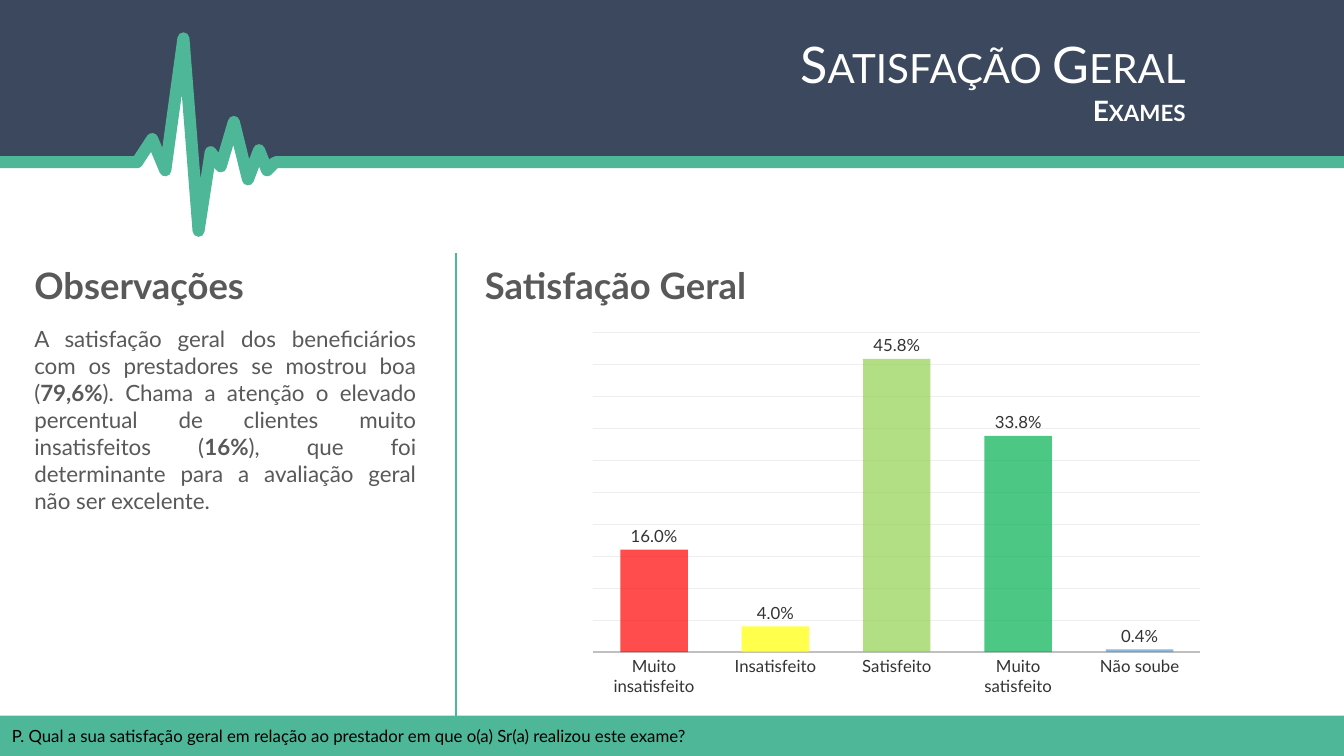
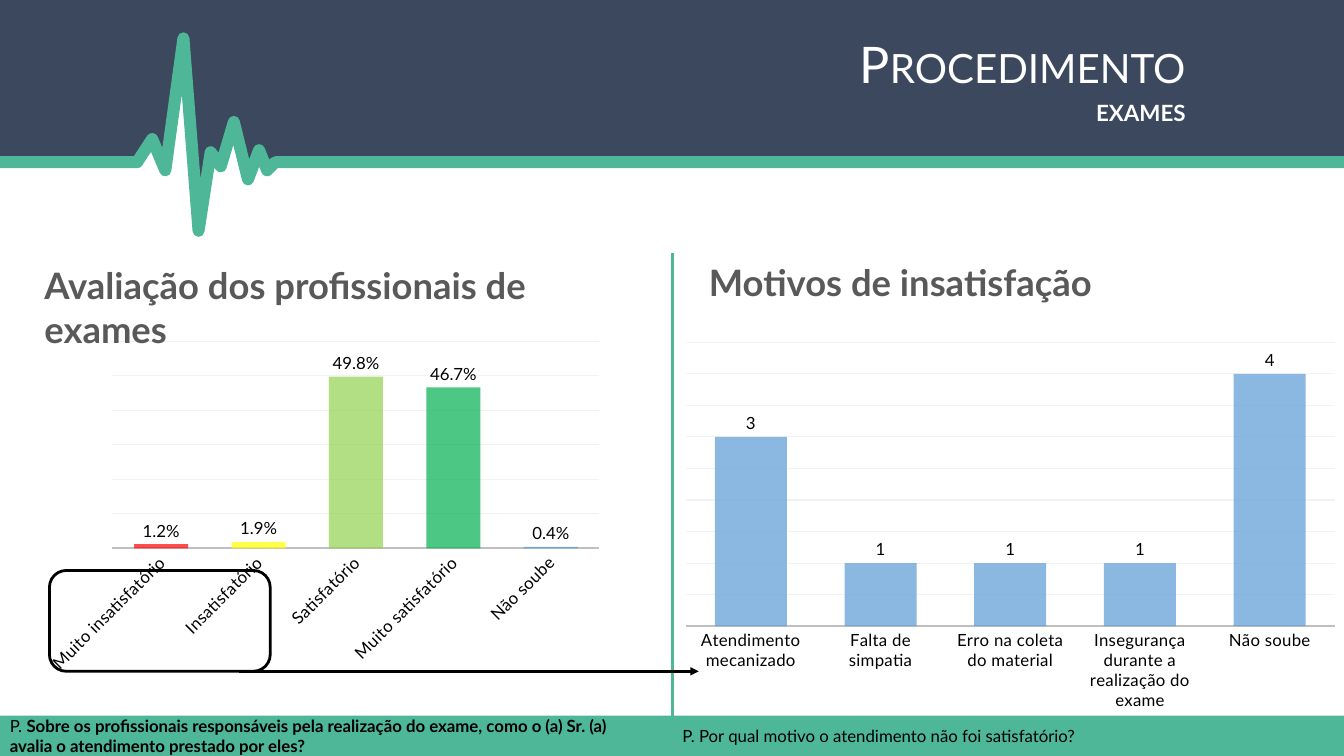
from lxml import etree
from pptx import Presentation
from pptx.chart.data import CategoryChartData
from pptx.dml.color import RGBColor
from pptx.enum.chart import XL_CHART_TYPE as ChartType, XL_LABEL_POSITION as LabelPosition
from pptx.enum.chart import XL_TICK_MARK as TickMark
from pptx.enum.shapes import MSO_CONNECTOR as Connector, MSO_SHAPE as Shape
from pptx.enum.text import MSO_ANCHOR as Anchor, MSO_AUTO_SIZE as AutoSize, PP_ALIGN as Align
from pptx.oxml.ns import qn
from pptx.util import Inches, Pt

FONT = "Lato"
COLORS = {
    "navy": "3B485D", "green": "4EB798", "white": "FFFFFF", "black": "000000",
    "heading": "595959", "label": "333333", "axis": "BFBFBF",
    "grid_soft": "F2F2F2", "grid": "EEEEEE", "bar": "5B9BD5",
}
RATING_COLORS = ["FF0000", "FFFF00", "92D050", "00B050"]
WIDTH, HEIGHT = 13.33, 7.5
BAND_TOP, BAND_HEIGHT = 7.1, 0.4
TITLE_BOX = (2.46, 0.28, 9.4, 1.04)
HEARTBEAT = [
    (0, 1.61), (1.36, 1.61), (1.51, 1.38), (1.64, 1.69), (1.82, 0.38), (1.97, 2.29),
    (2.09, 1.51), (2.19, 1.65), (2.32, 1.21), (2.46, 1.78), (2.57, 1.49),
    (2.65, 1.69), (2.73, 1.61), (WIDTH, 1.61),
]

SLIDES = [
    {
        "title": ("Satisfação Geral", "Exames"),
        "divider": 4.52,
        "headings": {
            1: ("Observações", (0.24, 2.56, 4.19, 0.54)),
            3: ("Satisfação Geral", (4.71, 2.56, 4.19, 0.54)),
        },
        "body": [
            ("A satisfação geral dos beneficiários com os prestadores se mostrou boa (", False),
            ("79,6%", True),
            ("). Chama a atenção o elevado percentual de clientes muito insatisfeitos (", False),
            ("16%", True),
            ("), que foi determinante para a avaliação geral não ser excelente.", False),
        ],
        "questions": [
            (0.02, 8.29, [("P. Qual a sua satisfação geral em relação ao prestador em que "
                           "o(a) Sr(a) realizou este exame?", False)]),
        ],
        "charts": [
            {
                "box": (5.76, 3.22, 6.27, 3.76),
                "data": [("Muito insatisfeito", 0.16), ("Insatisfeito", 0.04),
                         ("Satisfeito", 0.458), ("Muito satisfeito", 0.338),
                         ("Não soube", 0.004)],
                "format": "0.0%", "maximum": 0.5, "step": 0.05, "points": RATING_COLORS,
                "text": "label", "grid": ("grid", 0.25), "axis_width": 1, "spacing": 0,
            },
        ],
    },
    {
        "title": ("Procedimento", "exames"),
        "divider": 6.67,
        "headings": {
            1: ("Avaliação dos profissionais de exames", (0.34, 2.56, 6.01, 0.54)),
            3: ("Motivos de insatisfação", (6.93, 2.53, 4.19, 0.54)),
        },
        "questions": [
            (0, 6.36, [("P. ", False),
                       ("Sobre os profissionais responsáveis pela realização do exame, como o "
                        "(a) Sr. (a) avalia o atendimento prestado por eles?", True)]),
            (6.67, 6.31, [("P. Por qual motivo o atendimento não foi satisfatório?", False)]),
        ],
        "charts": [
            {
                "box": (0.36, 3.32, 5.7, 3.42),
                "data": [("Muito insatisfatório", 0.012), ("Insatisfatório", 0.019),
                         ("Satisfatório", 0.498), ("Muito satisfatório", 0.467),
                         ("Não soube", 0.004)],
                "format": "0.0%", "maximum": 0.6, "step": 0.1, "points": RATING_COLORS,
                "text": "black", "grid": ("grid_soft", 0.75), "axis_width": 1.25,
                "spacing": 20, "rotation": -45,
            },
            {
                "box": (6.67, 3.32, 6.7, 3.8),
                "data": [("Atendimento mecanizado", 3), ("Falta de simpatia", 1),
                         ("Erro na coleta do material", 1),
                         ("Insegurança durante a realização do exame", 1), ("Não soube", 4)],
                "format": "0", "maximum": 4.5, "step": 0.5, "points": [],
                "text": "black", "grid": ("grid_soft", 0.75), "axis_width": 1.25,
                "spacing": 20,
            },
        ],
        "callout": {"box": (0.49, 5.66, 2.19, 1), "arrow": (2.37, 6.66, 6.93, 6.66)},
    },
]


def rgb(name):
    return RGBColor.from_string(COLORS.get(name, name))


def inches(values):
    return [Inches(value) for value in values]


def place(shape, box):
    shape.left, shape.top, shape.width, shape.height = inches(box)


def style_font(font, size, color, bold=False):
    font.name, font.size, font.bold = FONT, Pt(size), bold
    font.color.rgb = rgb(color)


def style_line(line, color, width):
    line.color.rgb = rgb(color)
    line.width = Pt(width)


def style_shape(shape, fill=None, line=None, width=1):
    shape.shadow.inherit = False
    if fill:
        shape.fill.solid()
        shape.fill.fore_color.rgb = rgb(fill)
    else:
        shape.fill.background()
    if line:
        style_line(shape.line, line, width)
    else:
        shape.line.fill.background()


def prepare_frame(frame, anchor=Anchor.TOP):
    frame.word_wrap = True
    frame.auto_size = AutoSize.NONE
    frame.vertical_anchor = anchor


def write_runs(paragraph, runs, size, color, align=Align.LEFT):
    properties = paragraph._p.get_or_add_pPr()
    properties.set("marL", "0")
    properties.set("indent", "0")
    etree.SubElement(properties, qn("a:buNone"))
    paragraph.alignment = align
    paragraph.space_before = Pt(0)
    for text, bold in runs:
        run = paragraph.add_run()
        run.text = text
        style_font(run.font, size, color, bold)


def add_line(slide, ends, color, width, arrow=False):
    connector = slide.shapes.add_connector(Connector.STRAIGHT, *inches(ends))
    style_line(connector.line, color, width)
    etree.SubElement(connector.element.spPr, qn("a:effectLst"))
    if arrow:
        etree.SubElement(connector.line._get_or_add_ln(), qn("a:tailEnd"), type="triangle")


def add_outline(slide, points, close):
    start, *others = [tuple(inches(point)) for point in points]
    builder = slide.shapes.build_freeform(*start)
    builder.add_line_segments(others, close=close)
    return builder.convert_to_shape()


def decorate_layout(layout, slide):
    for placeholder in list(layout.placeholders):
        if placeholder.placeholder_format.idx >= 10:
            placeholder.element.getparent().remove(placeholder.element)
    header = add_outline(slide, HEARTBEAT + [(WIDTH, 0), (0, 0)], True)
    style_shape(header, "navy")
    pulse = add_outline(slide, HEARTBEAT, False)
    style_shape(pulse, line="green", width=8.6)
    etree.SubElement(pulse.line._get_or_add_ln(), qn("a:round"))
    band = slide.shapes.add_shape(
        Shape.RECTANGLE, *inches((0, BAND_TOP, WIDTH, BAND_HEIGHT)))
    style_shape(band, "green")
    for shape in (header, pulse, band):
        layout.shapes.element.append(shape.element)
    place(layout.placeholders[0], TITLE_BOX)


def fill_title(slide, lines):
    frame = slide.shapes.title.text_frame
    prepare_frame(frame)
    for index, (text, size, bold) in enumerate(zip(lines, (36, 20), (False, True))):
        paragraph = frame.add_paragraph() if index else frame.paragraphs[0]
        write_runs(paragraph, [(text, bold)], size, "white", Align.RIGHT)
        paragraph.runs[0].font._element.set("cap", "small")


def fill_placeholders(slide, content):
    texts = {idx: ([(text, True)], box, 26, Align.LEFT)
             for idx, (text, box) in content["headings"].items()}
    if "body" in content:
        texts[2] = (content["body"], (0.24, 3.18, 3.99, 1.72), 16, Align.JUSTIFY)
    for placeholder in list(slide.placeholders):
        idx = placeholder.placeholder_format.idx
        if idx in texts:
            runs, box, size, align = texts[idx]
            place(placeholder, box)
            prepare_frame(placeholder.text_frame)
            write_runs(placeholder.text_frame.paragraphs[0], runs, size, "heading", align)
        elif idx:
            placeholder.element.getparent().remove(placeholder.element)


def add_question(slide, left, width, runs):
    box = slide.shapes.add_textbox(*inches((left, BAND_TOP, width, BAND_HEIGHT)))
    prepare_frame(box.text_frame, Anchor.MIDDLE)
    box.text_frame.margin_top = box.text_frame.margin_bottom = 0
    write_runs(box.text_frame.paragraphs[0], runs, 12, "black")


def paint_bars(fill, color):
    fill.solid()
    fill.fore_color.rgb = rgb(color)
    color_element = fill._xPr.find(qn("a:solidFill"))[0]
    etree.SubElement(color_element, qn("a:alpha"), val="70000")


def add_bar_chart(slide, content):
    data = CategoryChartData(number_format=content["format"])
    data.categories = [category for category, value in content["data"]]
    data.add_series("Series 1", [value for category, value in content["data"]])
    frame = slide.shapes.add_chart(
        ChartType.COLUMN_CLUSTERED, *inches(content["box"]), data)
    slide.shapes.title.element.addprevious(frame.element)
    chart = frame.chart
    chart.has_legend = chart.has_title = False
    style_font(chart.font, 12, content["text"])
    area = etree.Element(qn("c:spPr"))
    etree.SubElement(area, qn("a:noFill"))
    etree.SubElement(etree.SubElement(area, qn("a:ln")), qn("a:noFill"))
    chart.element.find(qn("c:chart")).addnext(area)

    plot = chart.plots[0]
    plot.vary_by_categories = False
    plot.gap_width, plot.overlap = 80, 25
    series = plot.series[0]
    paint_bars(series.format.fill, "bar")
    for index, color in enumerate(content["points"]):
        paint_bars(series.points[index].format.fill, color)
    labels = series.data_labels
    labels.show_value = True
    labels.number_format, labels.number_format_is_linked = content["format"], False
    labels.position = LabelPosition.OUTSIDE_END
    style_font(labels.font, 12, content["text"])

    categories, values = chart.category_axis, chart.value_axis
    categories.major_tick_mark = TickMark.NONE
    style_line(categories.format.line, "axis", content["axis_width"])
    category_font = categories.tick_labels.font
    style_font(category_font, 12, content["text"])
    category_font._element.set("spc", str(content["spacing"]))
    if "rotation" in content:
        body = categories._element.find(qn("c:txPr")).find(qn("a:bodyPr"))
        body.set("rot", str(content["rotation"] * 60000))
    values.visible = False
    values.minimum_scale, values.maximum_scale = 0, content["maximum"]
    values.major_unit = content["step"]
    values.has_major_gridlines = True
    style_line(values.major_gridlines.format.line, *content["grid"])


def add_callout(slide, callout):
    frame = slide.shapes.add_shape(Shape.ROUNDED_RECTANGLE, *inches(callout["box"]))
    style_shape(frame, line="black", width=2)
    add_line(slide, callout["arrow"], "black", 2, arrow=True)


def main():
    presentation = Presentation()
    presentation.slide_width, presentation.slide_height = Inches(WIDTH), Inches(HEIGHT)
    layout = presentation.slide_layouts.get_by_name("Comparison")
    for number, content in enumerate(SLIDES):
        slide = presentation.slides.add_slide(layout)
        if number == 0:
            decorate_layout(layout, slide)
        fill_title(slide, content["title"])
        fill_placeholders(slide, content)
        for chart in content["charts"]:
            add_bar_chart(slide, chart)
        for question in content["questions"]:
            add_question(slide, *question)
        divider = content["divider"]
        add_line(slide, (divider, 2.51, divider, 7.19), "green", 1.5)
        if "callout" in content:
            add_callout(slide, content["callout"])
    presentation.save("out.pptx")


if __name__ == "__main__":
    main()
